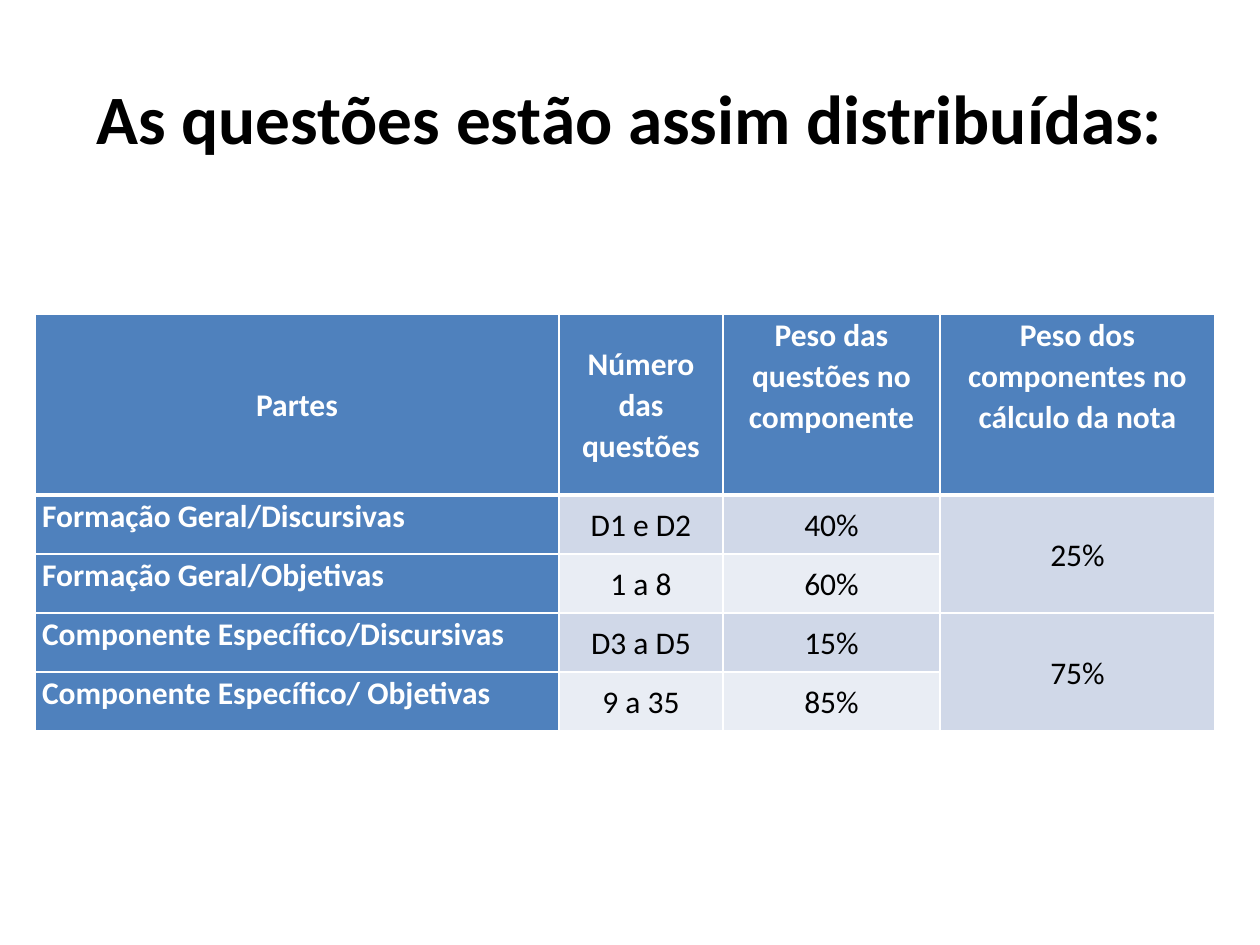
from lxml import etree
from pptx import Presentation
from pptx.dml.color import RGBColor
from pptx.enum.text import MSO_ANCHOR, PP_ALIGN
from pptx.oxml.ns import qn
from pptx.util import Pt

PX = 914400 / 126
TOP, MIDDLE = MSO_ANCHOR.TOP, MSO_ANCHOR.MIDDLE
LEFT, CENTER = PP_ALIGN.LEFT, PP_ALIGN.CENTER
COLORS = {
    "black": "000000",
    "white": "FFFFFF",
    "blue": "4F81BD",
    "band_dark": "D0D8E8",
    "band_light": "E9EDF4",
}


def px(n):
    return round(n * PX)


def write(tf, text, size=18, color="black", bold=False, align=CENTER, spacing=1.07):
    p = tf.paragraphs[0]
    p.alignment = align
    p.line_spacing = spacing
    r = p.add_run()
    r.text = text
    r.font.name = "Calibri"
    r.font.size = Pt(size)
    r.font.bold = bold
    r.font.color.rgb = RGBColor.from_string(COLORS[color])


prs = Presentation()
prs.slide_width, prs.slide_height = px(1260), px(945)
s = prs.slides.add_slide(prs.slide_layouts[6])

title = s.shapes.add_textbox(px(63), px(38), px(1134), px(157))
tf = title.text_frame
tf.word_wrap = True
tf.vertical_anchor = MIDDLE
write(tf, "As questões estão assim distribuídas:", size=39.6, bold=True, spacing=1.0)

rows = [
    ["Partes", "Número das questões", "Peso das questões no componente",
     "Peso dos componentes no cálculo da nota"],
    ["Formação Geral/Discursivas", "D1 e D2", "40%", "25%"],
    ["Formação Geral/Objetivas", "1 a 8", "60%", ""],
    ["Componente Específico/Discursivas", "D3 a D5", "15%", "75%"],
    ["Componente Específico/ Objetivas", "9 a 35", "85%", ""],
]
col_widths = [524, 164, 217, 275]
row_heights = [181, 59, 59, 59, 59]

table = s.shapes.add_table(
    len(rows), len(col_widths), px(35), px(314), px(sum(col_widths)), px(sum(row_heights))
).table
for col, width in zip(table.columns, col_widths):
    col.width = px(width)
for row, height in zip(table.rows, row_heights):
    row.height = px(height)
for top in (1, 3):
    table.cell(top, 3).merge(table.cell(top + 1, 3))

for i, row in enumerate(rows):
    for j, text in enumerate(row):
        cell = table.cell(i, j)
        header, label = i == 0, j == 0
        cell.margin_left = cell.margin_right = px(7)
        cell.margin_top = cell.margin_bottom = 0
        top_aligned = j >= 2 if header else label
        cell.vertical_anchor = TOP if top_aligned else MIDDLE

        tcPr = cell._tc.get_or_add_tcPr()
        for side in "LRTB":
            thick = (i, side) in ((0, "B"), (1, "T"))
            ln = etree.SubElement(tcPr, qn(f"a:ln{side}"), w=str(Pt(3 if thick else 1)))
            fill = etree.SubElement(ln, qn("a:solidFill"))
            etree.SubElement(fill, qn("a:srgbClr"), val=COLORS["white"])

        strong = header or label
        band = "band_dark" if i % 2 or j == 3 else "band_light"
        cell.fill.solid()
        cell.fill.fore_color.rgb = RGBColor.from_string(COLORS["blue" if strong else band])
        if text:
            write(cell.text_frame, text, color="white" if strong else "black", bold=strong,
                  align=LEFT if label and not header else CENTER)

prs.save("out.pptx")
